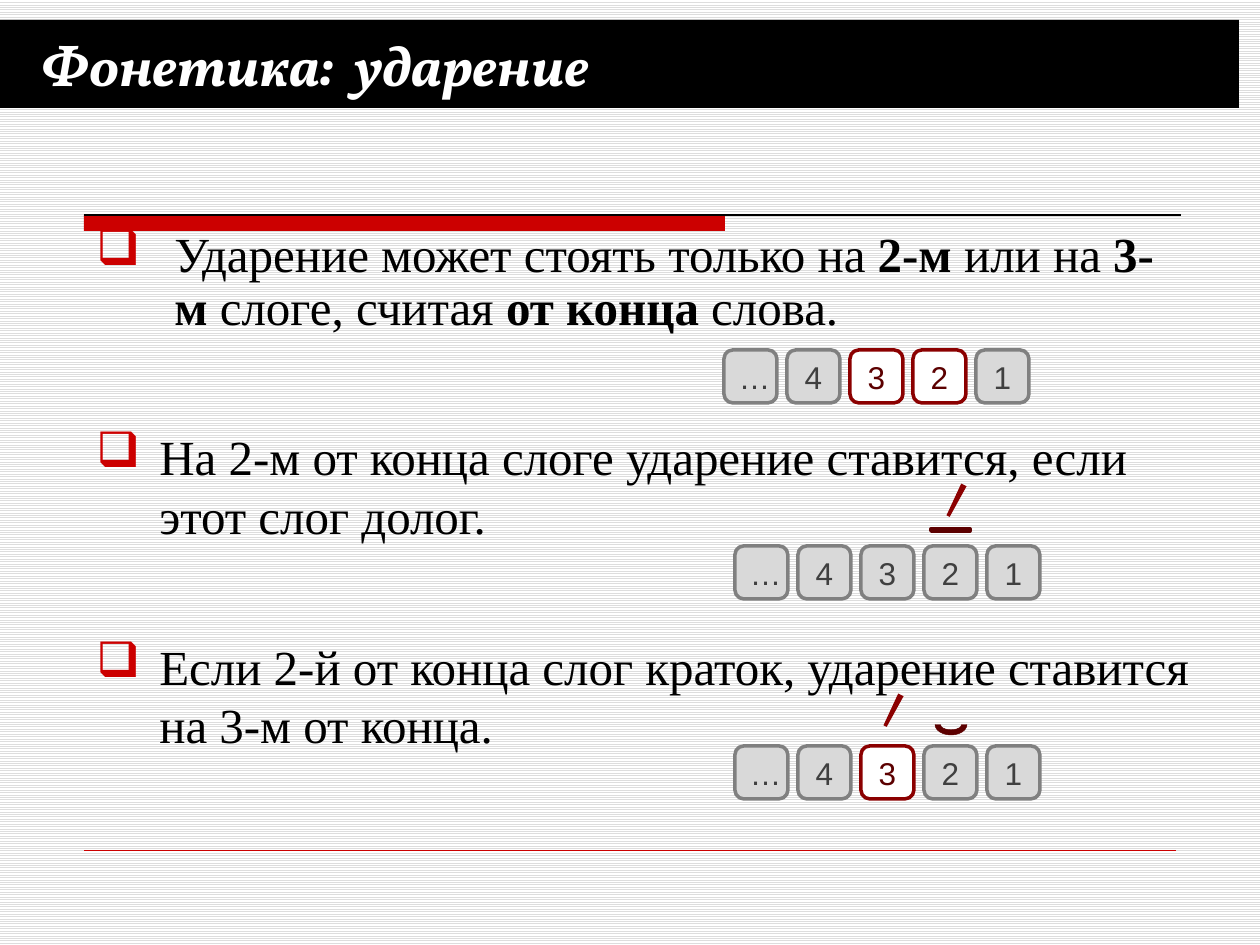
from lxml.etree import SubElement
from pptx import Presentation
from pptx.dml.color import RGBColor as RGB
from pptx.enum.dml import MSO_PATTERN as Pat
from pptx.enum.shapes import MSO_CONNECTOR as Conn, MSO_SHAPE as Geo
from pptx.enum.text import MSO_ANCHOR as Anchor, PP_ALIGN as Align
from pptx.oxml.ns import qn
from pptx.util import Pt

PX = 914400 // 126
HUES = {"black": "000000", "white": "FFFFFF", "stripe": "DDDDDD", "red": "CC0000",
        "dark": "8B0000", "deep": "5C0000", "pale": "D9D9D9", "gray": "808080",
        "ink": "404040"}

TITLE = "Фонетика:  ударение"
# box, indent, line spacing, runs as (text, bold)
RULES = [
    ((84, 224, 1102, 88), 78, 0.9, [
        ("Ударение может стоять только на ", False), ("2-м", True),
        (" или на ", False), ("3-м", True), (" слоге, считая ", False),
        ("от конца", True), (" слова.", False)]),
    ((84, 420, 1134, 63), 63, 1.0, [
        ("На 2-м от конца слоге ударение ставится, если этот слог долог.", False)]),
    ((84, 630, 1134, 63), 63, 1.0, [
        ("Если 2-й от конца слог краток, ударение ставится на 3-м от конца.", False)]),
]
LABELS = ["…", "4", "3", "2", "1"]
# left, top, stressed syllables
ROWS = [(724, 350, "32"), (735, 546, ""), (735, 746, "3")]
CELL, STEP = 53, 63
# shape, box, rotation, fill, line colour, line width
MARKS = [
    (Geo.MATH_MINUS, (924, 525, 53, 10), 0, "white", "deep", 2),
    (Geo.BLOCK_ARC, (935, 714, 32, 21), 180, "deep", "deep", 0.25),
    (Geo.TRAPEZOID, (953, 483, 6, 35), 206.9, "dark", None, 0),
    (Geo.TRAPEZOID, (890, 693, 6, 35), 206.9, "dark", None, 0),
]
# start x, end x, y, colour, width
LINES = [(84, 1181, 215, "black", 0.75), (84, 1176, 850, "red", 0.25)]


def hue(name):
    return RGB.from_string(HUES[name])


def scale(box):
    return [n * PX for n in box]


def style(font, color, **vals):
    font.color.rgb = hue(color)
    for key, val in vals.items():
        setattr(font, key, val)


def add_shape(geo, box, fill, line=None, width=0):
    shape = slide.shapes.add_shape(geo, *scale(box))
    shape.shadow.inherit = False
    shape.fill.solid()
    shape.fill.fore_color.rgb = hue(fill)
    if line:
        shape.line.color.rgb = hue(line)
        shape.line.width = Pt(width)
    else:
        shape.line.fill.background()
    return shape


def add_line(x1, x2, y, color, width):
    line = slide.shapes.add_connector(Conn.STRAIGHT, *scale((x1, y, x2, y)))
    line.line.color.rgb = hue(color)
    line.line.width = Pt(width)
    SubElement(line._element.spPr, qn("a:effectLst"))


def add_bullet(para, indent):
    props = para._p.get_or_add_pPr()
    props.set("marL", str(indent * PX))
    props.set("indent", str(-indent * PX))
    color = SubElement(props, qn("a:buClr"))
    SubElement(color, qn("a:srgbClr"), val=HUES["red"])
    SubElement(props, qn("a:buChar"), char="❑")


def add_rule(box, indent, space, runs):
    frame = slide.shapes.add_textbox(*scale(box)).text_frame
    frame.word_wrap = True
    para = frame.paragraphs[0]
    add_bullet(para, indent)
    para.line_spacing = space
    for text, bold in runs:
        run = para.add_run()
        run.text = text
        style(run.font, "black", name="Times New Roman", size=Pt(28), bold=bold)


def add_row(left, top, stressed):
    for i, label in enumerate(LABELS):
        fill, line, ink = (("white", "dark", "deep") if label in stressed
                           else ("pale", "gray", "ink"))
        cell = add_shape(Geo.ROUNDED_RECTANGLE, (left + i * STEP, top, CELL, CELL),
                         fill, line, 2)
        frame = cell.text_frame
        frame.vertical_anchor = Anchor.MIDDLE
        para = frame.paragraphs[0]
        para.text = label
        para.alignment = Align.CENTER
        style(para.font, ink, name="Arial", size=Pt(18))


def set_title():
    title = slide.shapes.title
    title.left, title.top, title.width, title.height = scale((0, 20, 1239, 88))
    title.fill.solid()
    title.fill.fore_color.rgb = hue("black")
    frame = title.text_frame
    frame.vertical_anchor = Anchor.MIDDLE
    frame.margin_left = 41 * PX
    para = frame.paragraphs[0]
    para.text = TITLE
    para.alignment = Align.LEFT
    style(para.font, "white", name="Vollkorn", size=Pt(32), bold=True, italic=True)


prs = Presentation()
prs.slide_width, prs.slide_height = scale((1260, 945))
slide = prs.slides.add_slide(prs.slide_layouts[5])
back = slide.background.fill
back.patterned()
back.pattern = Pat.LIGHT_HORIZONTAL
back.fore_color.rgb = hue("stripe")
back.back_color.rgb = hue("white")

set_title()
add_shape(Geo.RECTANGLE, (84, 215, 641, 16), "red")
for line in LINES:
    add_line(*line)
for rule in RULES:
    add_rule(*rule)
for row in ROWS:
    add_row(*row)
for geo, box, turn, fill, line, width in MARKS:
    mark = add_shape(geo, box, fill, line, width)
    mark.rotation = turn
    if geo == Geo.TRAPEZOID:
        mark.adjustments[0] = 0.2

prs.save("out.pptx")
